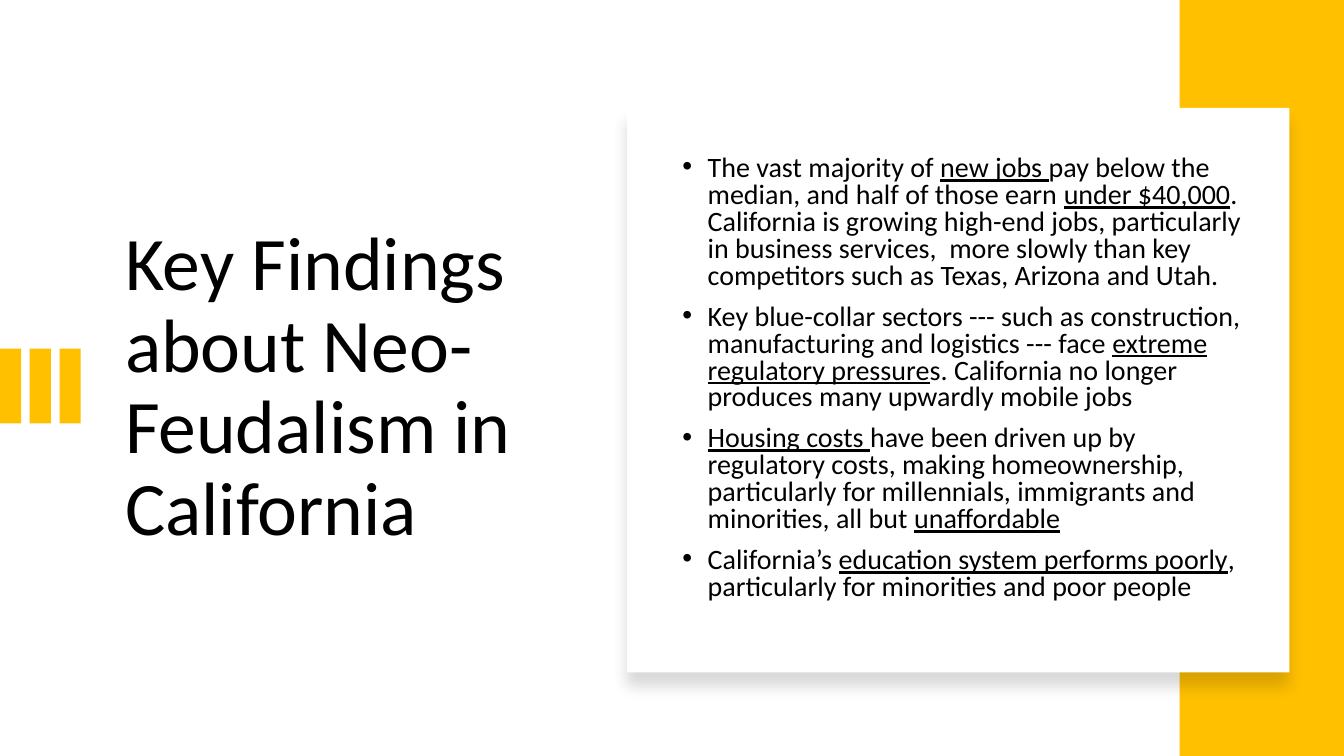
import pptx
import pptx.util
import pptx.dml.color
import pptx.enum.shapes
import pptx.enum.text
import pptx.oxml
import pptx.oxml.ns

Inches = pptx.util.Inches
Pt = pptx.util.Pt
GOLD, WHITE, BLACK = "FFC000", "FFFFFF", "000000"
FONT = "Calibri"
POINTS = [
    [("The vast majority of ", False), ("new jobs ", True),
     ("pay below the median, and half of those earn ", False),
     ("under $40,000", True),
     (". California is growing high-end jobs, particularly in business "
      "services,  more slowly than key competitors such as Texas, Arizona "
      "and Utah.", False)],
    [("Key blue-collar sectors --- such as construction, manufacturing and "
      "logistics --- face ", False),
     ("extreme regulatory pressure", True),
     ("s. California no longer produces many upwardly mobile jobs", False)],
    [("Housing costs ", True),
     ("have been driven up by regulatory costs, making homeownership, "
      "particularly for millennials, immigrants and minorities, all but ",
      False),
     ("unaffordable", True)],
    [("California’s ", False), ("education system performs poorly", True),
     (", particularly for minorities and poor people", False)],
]


def color(code):
    return pptx.dml.color.RGBColor.from_string(code)


def block(shapes, box, fill):
    kind = pptx.enum.shapes.MSO_SHAPE.RECTANGLE
    shape = shapes.add_shape(kind, *map(Inches, box))
    shape.shadow.inherit = False
    shape.fill.solid()
    shape.fill.fore_color.rgb = color(fill)
    shape.line.fill.background()
    return shape


def style(para, size, spacing):
    para.font.name = FONT
    para.font.size = Pt(size)
    para.font.color.rgb = color(BLACK)
    para.alignment = pptx.enum.text.PP_ALIGN.LEFT
    para.line_spacing = spacing


def setup(frame):
    frame.word_wrap = True
    frame.auto_size = pptx.enum.text.MSO_AUTO_SIZE.NONE
    frame.vertical_anchor = pptx.enum.text.MSO_ANCHOR.MIDDLE


def heading(slide, box):
    title = slide.shapes.title
    title.left, title.top, title.width, title.height = map(Inches, box)
    setup(title.text_frame)
    title.text_frame.text = "Key Findings about Neo-Feudalism in California"
    style(title.text_frame.paragraphs[0], 54, 0.9)


def stripes(slide, box):
    left, top, width, height = box
    bar = 0.21
    step = (width - bar) / 2
    group = slide.shapes.add_group_shape()
    for i in range(3):
        block(group.shapes, (left + i * step, top, bar, height), GOLD)


def shade(shape):
    effect = shape._element.spPr.find(pptx.oxml.ns.qn("a:effectLst"))
    effect.append(pptx.oxml.parse_xml(
        f'<a:outerShdw {pptx.oxml.ns.nsdecls("a")} blurRad="{Pt(11)}" '
        f'dist="{Pt(10)}" dir="5400000" algn="t" rotWithShape="0">'
        f'<a:srgbClr val="{BLACK}"><a:alpha val="15000"/></a:srgbClr>'
        '</a:outerShdw>'))


def bullet(para):
    props = para._p.get_or_add_pPr()
    props.set("marL", str(Inches(0.25)))
    props.set("indent", str(-Inches(0.25)))
    for tag in ('buFont {} typeface="Arial"', 'buChar {} char="•"'):
        mark = tag.format(pptx.oxml.ns.nsdecls("a"))
        props.append(pptx.oxml.parse_xml(f"<a:{mark}/>"))


def card(slide, box):
    left, top, width, height = box
    shade(block(slide.shapes, box, WHITE))
    area = (left + 0.45, top + 0.2, width - 0.82, height - 0.62)
    frame = slide.shapes.add_textbox(*map(Inches, area)).text_frame
    setup(frame)
    for i, point in enumerate(POINTS):
        para = frame.add_paragraph() if i else frame.paragraphs[0]
        style(para, 20, 0.8)
        para.space_before = Pt(10)
        bullet(para)
        for text, under in point:
            run = para.add_run()
            run.text = text
            if under:
                run.font.underline = True


def main():
    deck = pptx.Presentation()
    deck.slide_width = Inches(13.33)
    deck.slide_height = Inches(7.5)
    slide = deck.slides.add_slide(deck.slide_layouts[5])
    heading(slide, (1.14, 1.46, 4.26, 4.79))
    stripes(slide, (0, 3.46, 0.8, 0.74))
    block(slide.shapes, (11.7, 0, 1.63, 7.5), GOLD)
    card(slide, (6.22, 1.07, 6.57, 5.6))
    deck.save("out.pptx")


if __name__ == "__main__":
    main()
